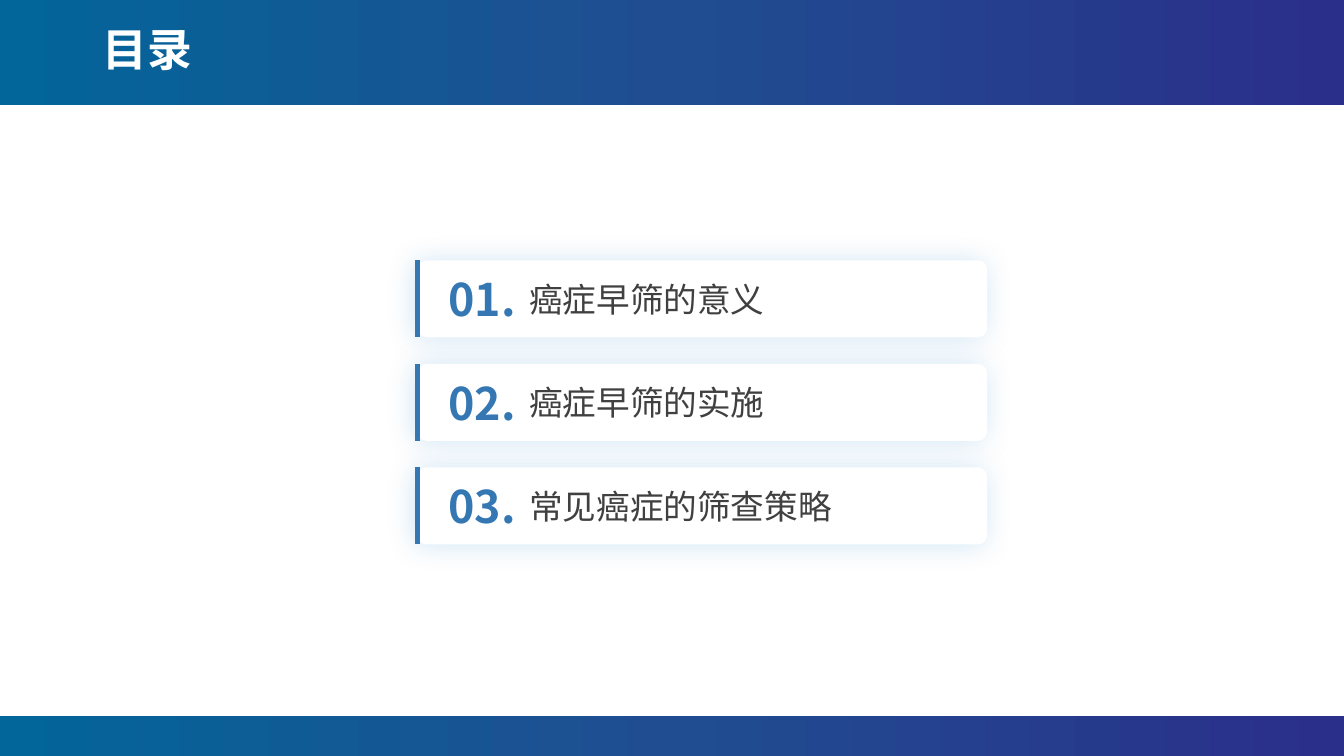
"""Build a contents slide with three numbered cards between gradient bands."""
from copy import deepcopy

from lxml.etree import SubElement
from pptx import Presentation
from pptx.dml.color import RGBColor
from pptx.enum.shapes import MSO_CONNECTOR, MSO_SHAPE
from pptx.enum.text import MSO_ANCHOR as ANCHOR, MSO_AUTO_SIZE as AUTO
from pptx.oxml.ns import qn
from pptx.util import Cm, Pt

TITLE = "目录"
ITEMS = ["癌症早筛的意义", "癌症早筛的实施", "常见癌症的筛查策略"]
FONT = "Noto Sans CJK SC"
WHITE, ACCENT, INK, GLOW = "FFFFFF", "3477B2", "404040", "007ACD"
BAND_STOPS = [(0, "02669A"), (0.5, "204D91"), (1, "2A2F8A")]

SLIDE_W, SLIDE_H = 33.87, 19.05
HEADER_H, FOOTER_H = 2.64, 1.01
CARD_X, CARD_Y, CARD_W, CARD_H, CARD_STEP = 10.52, 6.56, 14.36, 1.94, 2.61
NUMBER_X, NUMBER_DY, NUMBER_W, NUMBER_H = 11.3, 0.29, 2.06, 1.37
LABEL_X, LABEL_DY, LABEL_CHAR_W, LABEL_H = 13.34, 0.46, 0.9, 1.02


def rgb(color):
    return RGBColor.from_string(color)


def add_band(shapes, y, h):
    sp = shapes.add_shape(MSO_SHAPE.RECTANGLE, 0, Cm(y), Cm(SLIDE_W), Cm(h))
    sp.shadow.inherit = False
    sp.line.fill.background()
    sp.fill.gradient()
    sp.fill.gradient_angle = 0
    stops = sp._element.spPr.find(qn("a:gradFill")).find(qn("a:gsLst"))
    stops.insert(1, deepcopy(stops[0]))
    for stop, (position, color) in zip(sp.fill.gradient_stops, BAND_STOPS):
        stop.position = position
        stop.color.rgb = rgb(color)


def add_text(shapes, text, x, y, w, h, size, color, bold=False):
    tf = shapes.add_textbox(Cm(x), Cm(y), Cm(w), Cm(h)).text_frame
    tf.word_wrap = True
    tf.auto_size = AUTO.SHAPE_TO_FIT_TEXT
    tf.margin_left = tf.margin_right = tf.margin_top = tf.margin_bottom = 0
    p = tf.paragraphs[0]
    p.text = text
    p.font.size, p.font.bold, p.font.name = Pt(size), bold, FONT
    p.font.color.rgb = rgb(color)
    props = p._p.pPr.find(qn("a:defRPr"))
    SubElement(props, qn("a:ea"), typeface=FONT)
    return tf


def add_glow(sp):
    sp.shadow.inherit = False
    effects = sp._element.spPr.find(qn("a:effectLst"))
    shadow = SubElement(effects, qn("a:outerShdw"), blurRad=str(Pt(20)),
                        dist=str(Pt(3)), dir="10800000", algn="ctr", rotWithShape="0")
    tint = SubElement(shadow, qn("a:srgbClr"), val=GLOW)
    SubElement(tint, qn("a:alpha"), val="19000")


def add_card(shapes, number, label, y):
    card = shapes.add_group_shape().shapes
    sp = card.add_shape(MSO_SHAPE.ROUNDED_RECTANGLE, Cm(CARD_X), Cm(y), Cm(CARD_W), Cm(CARD_H))
    sp.adjustments[0] = 0.12
    sp.fill.solid()
    sp.fill.fore_color.rgb = rgb(WHITE)
    sp.line.fill.background()
    add_glow(sp)
    edge = card.add_connector(MSO_CONNECTOR.STRAIGHT, Cm(CARD_X), Cm(y), Cm(CARD_X), Cm(y + CARD_H))
    edge.line.color.rgb = rgb(ACCENT)
    edge.line.width = Pt(3)
    SubElement(edge._element.spPr, qn("a:effectLst"))
    add_text(card, f"{number:02}.", NUMBER_X, y + NUMBER_DY, NUMBER_W, NUMBER_H, 32, ACCENT, True)
    add_text(card, label, LABEL_X, y + LABEL_DY, LABEL_CHAR_W * len(label), LABEL_H, 24, INK)


def main():
    prs = Presentation()
    prs.slide_width, prs.slide_height = Cm(SLIDE_W), Cm(SLIDE_H)
    shapes = prs.slides.add_slide(prs.slide_layouts[6]).shapes
    add_band(shapes, 0, HEADER_H)
    add_band(shapes, SLIDE_H - FOOTER_H, FOOTER_H)
    title = add_text(shapes, TITLE, 2.34, 0, 29.21, HEADER_H, 32, WHITE, True)
    title.auto_size = AUTO.NONE
    title.vertical_anchor = ANCHOR.MIDDLE
    title.margin_left = Cm(0.25)
    title.paragraphs[0].line_spacing = 0.9
    for i, label in enumerate(ITEMS):
        add_card(shapes, i + 1, label, CARD_Y + i * CARD_STEP)
    prs.save("out.pptx")


if __name__ == "__main__":
    main()
